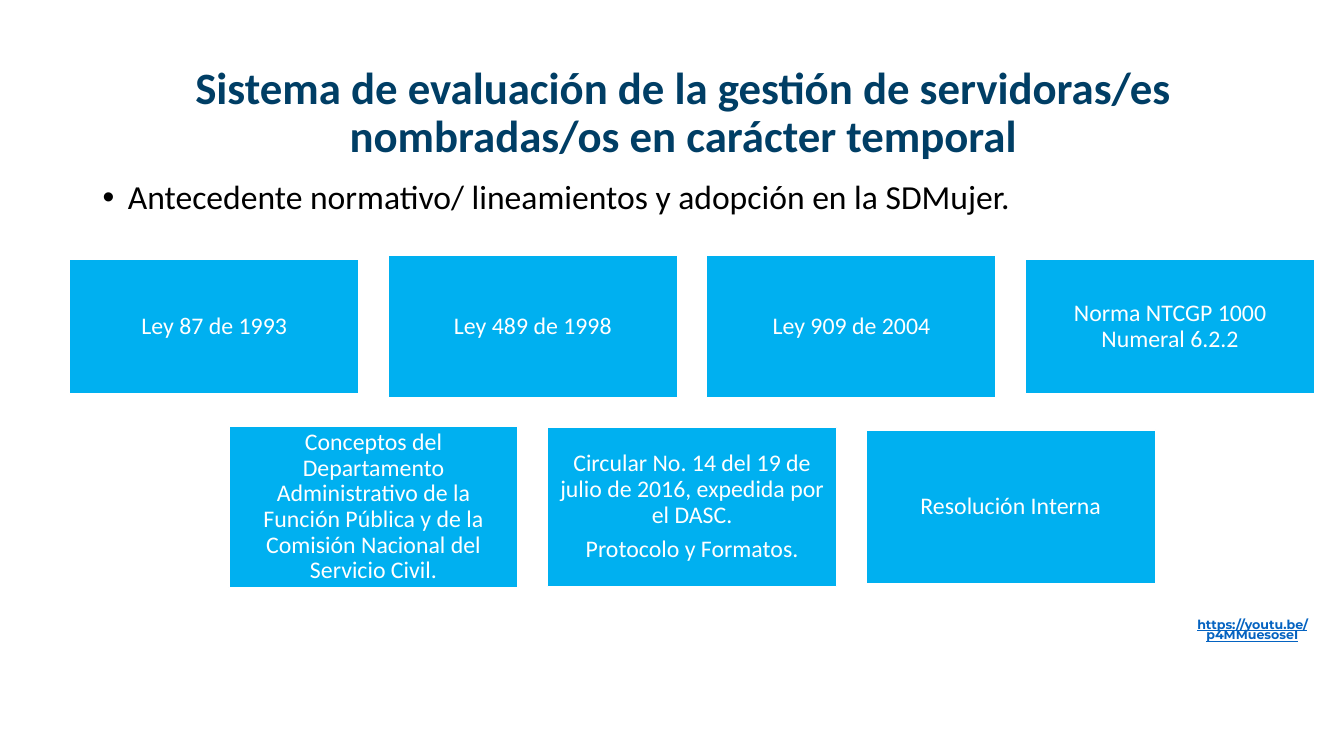
import pptx
import pptx.dml.color
import pptx.enum.shapes
import pptx.enum.text
import pptx.util
from lxml import etree

Inches = pptx.util.Inches
Pt = pptx.util.Pt
MIDDLE = pptx.enum.text.MSO_ANCHOR.MIDDLE
TOP = pptx.enum.text.MSO_ANCHOR.TOP
CENTER = pptx.enum.text.PP_ALIGN.CENTER
DRAWING_NS = "http://schemas.openxmlformats.org/drawingml/2006/main"


def color(value):
    return pptx.dml.color.RGBColor.from_string(value)


class SlideBuilder:
    font = "Calibri"
    navy = "003E65"
    black = "000000"
    white = "FFFFFF"
    box_blue = "00B0F0"
    link_blue = "0563C1"

    def __init__(self, presentation):
        self.slide = presentation.slides.add_slide(presentation.slide_layouts[6])

    def style_text(self, shape, text, size, text_color, anchor=MIDDLE, align=CENTER,
                   spacing=0.9, bold=False, font=None, underline=False):
        frame = shape.text_frame
        frame.word_wrap = True
        frame.vertical_anchor = anchor
        frame.text = text
        for index, paragraph in enumerate(frame.paragraphs):
            paragraph.alignment = align
            paragraph.line_spacing = spacing
            if index:
                paragraph.space_before = Pt(6)
            for run in paragraph.runs:
                run.font.name = font or self.font
                run.font.size = Pt(size)
                run.font.bold = bold
                run.font.underline = underline
                run.font.color.rgb = color(text_color)
        return frame

    def text(self, left, top, width, height, text, size, text_color, **style):
        shape = self.slide.shapes.add_textbox(
            Inches(left), Inches(top), Inches(width), Inches(height))
        return self.style_text(shape, text, size, text_color, **style)

    def bullet(self, left, top, width, height, text, size):
        frame = self.text(left, top, width, height, text, size, self.black,
                          anchor=TOP, align=pptx.enum.text.PP_ALIGN.LEFT)
        properties = frame.paragraphs[0]._p.get_or_add_pPr()
        properties.set("marL", str(Inches(0.25)))
        properties.set("indent", str(Inches(-0.25)))
        font = etree.SubElement(properties, f"{{{DRAWING_NS}}}buFont")
        font.set("typeface", "Arial")
        mark = etree.SubElement(properties, f"{{{DRAWING_NS}}}buChar")
        mark.set("char", "•")

    def box(self, left, middle, width, height, text):
        shape = self.slide.shapes.add_shape(
            pptx.enum.shapes.MSO_SHAPE.RECTANGLE, Inches(left),
            Inches(middle - height / 2), Inches(width), Inches(height))
        shape.shadow.inherit = False
        shape.fill.solid()
        shape.fill.fore_color.rgb = color(self.box_blue)
        shape.line.color.rgb = color(self.white)
        shape.line.width = Pt(1)
        frame = self.style_text(shape, text, 17, self.white)
        frame.margin_left = frame.margin_right = Inches(0.07)
        frame.margin_top = frame.margin_bottom = Inches(0.07)


def main():
    presentation = pptx.Presentation()
    presentation.slide_width = Inches(13.33)
    presentation.slide_height = Inches(7.5)
    builder = SlideBuilder(presentation)

    # Heading and lead bullet
    builder.text(1.03, 0.52, 11.5, 1.22,
                 "Sistema de evaluación de la gestión de servidoras/es "
                 "nombradas/os en carácter temporal",
                 32, builder.navy, bold=True)
    builder.bullet(0.92, 1.74, 11.5, 0.63,
                   "Antecedente normativo/ lineamientos y adopción en la SDMujer.", 24)

    # Regulations: the second row is offset by half a step
    box_width, step = 2.87, 3.16
    rows = [
        (0.69, 3.24, [
            (1.34, "Ley 87 de 1993"),
            (1.41, "Ley 489 de 1998"),
            (1.41, "Ley 909 de 2004"),
            (1.34, "Norma NTCGP 1000 Numeral 6.2.2"),
        ]),
        (0.69 + step / 2, 5.03, [
            (1.6, "Conceptos del Departamento Administrativo de la Función "
                  "Pública y de la Comisión Nacional del Servicio Civil."),
            (1.58, "Circular No. 14 del 19 de julio de 2016, expedida por el DASC.\n"
                   "Protocolo y Formatos."),
            (1.53, "Resolución Interna"),
        ]),
    ]
    for row_left, middle, regulations in rows:
        for column, (height, text) in enumerate(regulations):
            builder.box(row_left + column * step, middle, box_width, height, text)

    # Video address
    address = builder.text(11.34, 6.16, 2.16, 0.36, "https://youtu.be/p4MMuesoseI",
                           9, builder.link_blue, anchor=TOP, spacing=0.7,
                           bold=True, font="Montserrat", underline=True)
    address.margin_top = address.margin_bottom = 0

    presentation.save("out.pptx")


if __name__ == "__main__":
    main()
